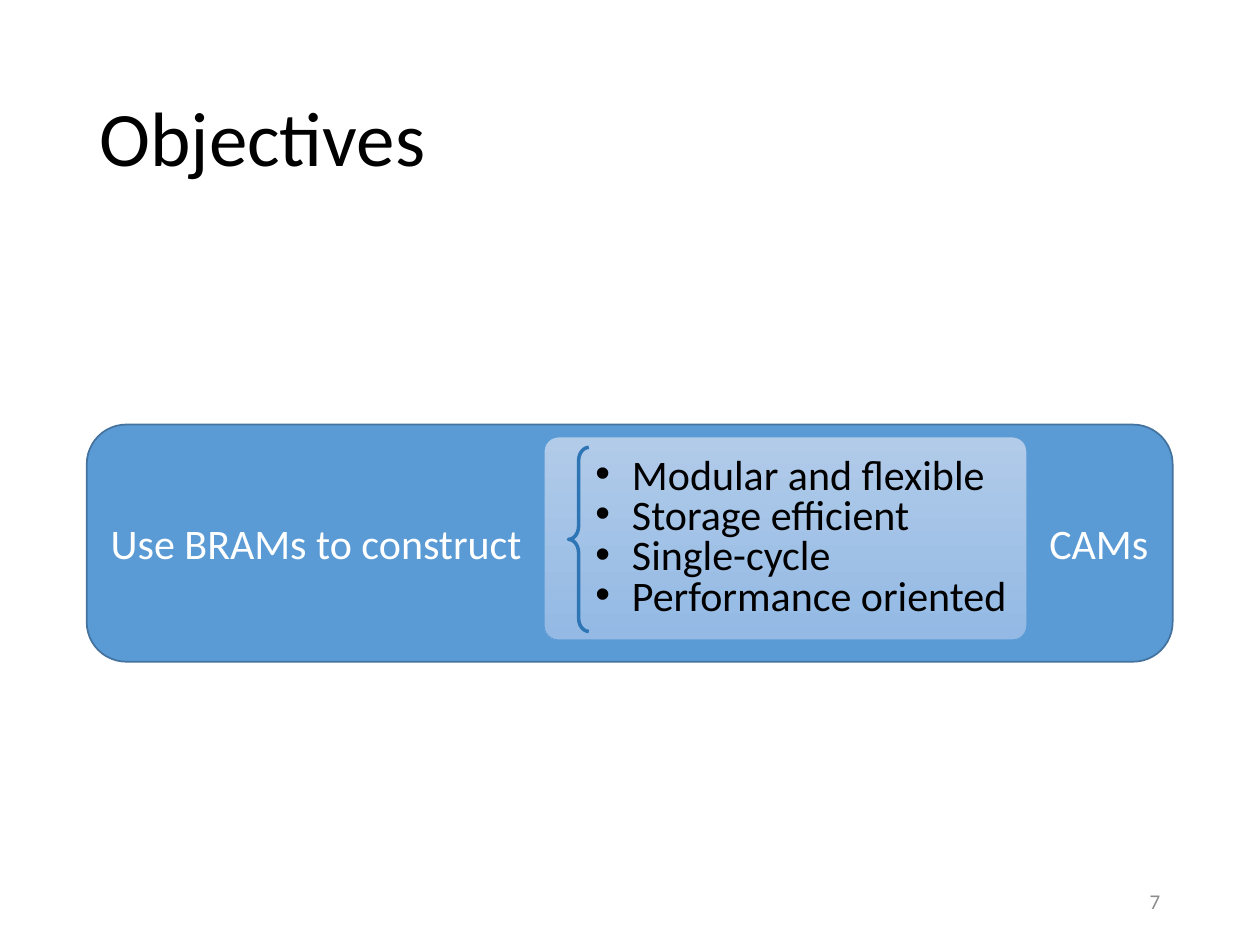
from lxml.etree import SubElement
from pptx import Presentation
from pptx.dml.color import RGBColor
from pptx.enum.shapes import MSO_SHAPE
from pptx.enum.text import MSO_ANCHOR, MSO_AUTO_SIZE, PP_ALIGN
from pptx.oxml.ns import qn
from pptx.util import Cm, Pt

COLORS = {
    "black": "000000",
    "white": "FFFFFF",
    "gray": "8C8C8C",
    "bar": "5B9BD5",
    "bar_line": "43739E",
    "panel_top": "B1CBE9",
    "panel_bottom": "93B9E4",
    "brace": "2E75B6",
}
FONT = "Calibri"
MARGIN = 1.75
CONTENT_WIDTH = 21.89
PANEL = (10.97, 8.81, 9.73, 4.09)
GOALS = [
    "Modular and flexible",
    "Storage efficient",
    "Single-cycle",
    "Performance oriented",
]


def color(name):
    return RGBColor.from_string(COLORS[name])


def place(sp, left, top, width, height):
    sp.left, sp.top, sp.width, sp.height = map(Cm, (left, top, width, height))


def write(sp, lines, size, color_name, align=PP_ALIGN.LEFT, spacing=1.0):
    tf = sp.text_frame
    tf.text = "\n".join(lines)
    tf.word_wrap = True
    tf.auto_size = MSO_AUTO_SIZE.NONE
    tf.vertical_anchor = MSO_ANCHOR.MIDDLE
    for p in tf.paragraphs:
        p.alignment = align
        p.line_spacing = spacing
        p.space_before = Pt(0)
        for r in p.runs:
            r.font.name = FONT
            r.font.size = Pt(size)
            r.font.color.rgb = color(color_name)


def add_outlined(slide, kind, box, line, width):
    sp = slide.shapes.add_shape(kind, *map(Cm, box))
    sp.shadow.inherit = False
    sp.line.color.rgb = color(line)
    sp.line.width = Pt(width)
    return sp


def add_bar(slide):
    box = (MARGIN, 8.56, CONTENT_WIDTH, 4.78)
    sp = add_outlined(slide, MSO_SHAPE.ROUNDED_RECTANGLE, box, "bar_line", 1)
    sp.fill.solid()
    sp.fill.fore_color.rgb = color("bar")
    write(sp, ["Use BRAMs to construct\tCAMs"], 24, "white")
    sp.text_frame.margin_right = 0
    pPr = sp.text_frame.paragraphs[0]._p.get_or_add_pPr()
    tabs = SubElement(pPr, qn("a:tabLst"))
    SubElement(tabs, qn("a:tab"), pos=str(Cm(18.92)), algn="l")


def add_panel(slide):
    sp = add_outlined(slide, MSO_SHAPE.ROUNDED_RECTANGLE, PANEL, "bar", 0.5)
    sp.adjustments[0] = 0.07
    sp.fill.gradient()
    sp.fill.gradient_angle = 270
    for stop, name in zip(sp.fill.gradient_stops, ("panel_top", "panel_bottom")):
        stop.color.rgb = color(name)


def add_brace(slide):
    box = (11.46, 9.02, 0.41, 3.71)
    sp = add_outlined(slide, MSO_SHAPE.LEFT_BRACE, box, "brace", 2)
    sp.adjustments[0] = 0.66
    sp.fill.background()


def fill_goals(slide, body):
    place(body, *PANEL)
    write(body, GOALS, 24, "black", spacing=0.8)
    body.text_frame.margin_left = Cm(0.3)
    body.text_frame.margin_right = 0
    for p in body.text_frame.paragraphs:
        pPr = p._p.get_or_add_pPr()
        pPr.set("marL", str(Cm(1.47)))
        pPr.set("indent", str(-Cm(0.74)))
        SubElement(pPr, qn("a:buFont"), typeface="Arial")
        SubElement(pPr, qn("a:buChar"), char="•")
    slide.shapes._spTree.append(body._element)


def add_page_number(slide):
    sp = slide.shapes.add_textbox(Cm(17.93), Cm(17.65), Cm(5.71), Cm(1.02))
    write(sp, ["7"], 12, "gray", PP_ALIGN.RIGHT)


def main():
    prs = Presentation()
    prs.slide_width, prs.slide_height = Cm(25.4), Cm(19.05)
    s = prs.slides.add_slide(prs.slide_layouts[1])
    title, body = s.placeholders
    place(title, MARGIN, 1.02, CONTENT_WIDTH, 3.68)
    write(title, ["Objectives"], 44, "black", spacing=0.9)
    add_bar(s)
    add_panel(s)
    fill_goals(s, body)
    add_brace(s)
    add_page_number(s)
    prs.save("out.pptx")


if __name__ == "__main__":
    main()
